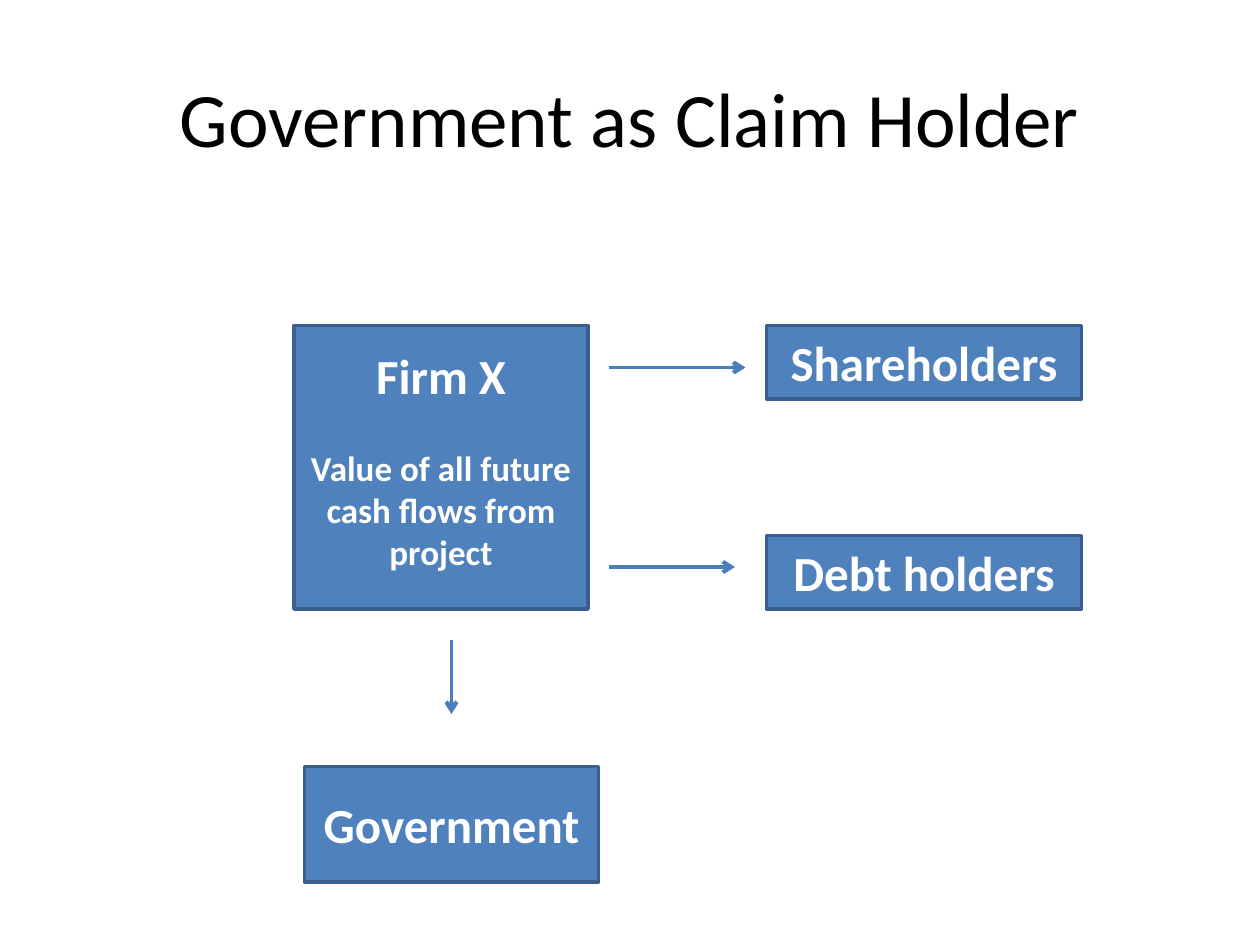
import pptx
import pptx.util
import pptx.dml.color
import pptx.enum.shapes
import pptx.enum.text
import pptx.oxml
import pptx.oxml.ns

Pt = pptx.util.Pt
RGBColor = pptx.dml.color.RGBColor

BLACK = RGBColor(0x00, 0x00, 0x00)
WHITE = RGBColor(0xFF, 0xFF, 0xFF)
BOX_FILL = RGBColor(0x4F, 0x81, 0xBD)
BOX_LINE = RGBColor(0x3A, 0x5F, 0x8C)
ARROW_BLUE = RGBColor(0x4B, 0x7E, 0xBC)
FONT = "Calibri"
HEADING_SIZE = 28
DETAIL_SIZE = 20

FIRM_LEFT, BOX_TOP = 168, 186
FIRM_WIDTH, FIRM_HEIGHT = 168, 162
HOLDER_LEFT, HOLDER_WIDTH, HOLDER_HEIGHT = 438, 180, 42
ARROW_LEFT = 348


def format_paragraph(paragraph, size, color, bold):
    paragraph.alignment = pptx.enum.text.PP_ALIGN.CENTER
    for run in paragraph.runs:
        run.font.name = FONT
        run.font.size = Pt(size)
        run.font.bold = bold
        run.font.color.rgb = color


def set_title(slide, text):
    title = slide.shapes.title
    title.left, title.top, title.width, title.height = Pt(36), Pt(21.6), Pt(648), Pt(90)
    title.text_frame.text = text
    title.text_frame.vertical_anchor = pptx.enum.text.MSO_ANCHOR.MIDDLE
    format_paragraph(title.text_frame.paragraphs[0], 44, BLACK, False)


def add_box(slide, left, top, width, height, heading):
    box = slide.shapes.add_shape(
        pptx.enum.shapes.MSO_SHAPE.RECTANGLE, Pt(left), Pt(top), Pt(width), Pt(height)
    )
    box.shadow.inherit = False
    box.fill.solid()
    box.fill.fore_color.rgb = BOX_FILL
    box.line.color.rgb = BOX_LINE
    box.line.width = Pt(2)
    text_frame = box.text_frame
    text_frame.word_wrap = True
    text_frame.vertical_anchor = pptx.enum.text.MSO_ANCHOR.MIDDLE
    text_frame.text = heading
    format_paragraph(text_frame.paragraphs[0], HEADING_SIZE, WHITE, True)
    return box


def add_detail(box, text):
    box.text_frame.margin_bottom = Pt(13)
    paragraph = box.text_frame.add_paragraph()
    paragraph.text = text
    paragraph.space_before = Pt(24)
    format_paragraph(paragraph, DETAIL_SIZE, WHITE, True)


def add_arrow(slide, start_x, start_y, end_x, end_y):
    arrow = slide.shapes.add_connector(
        pptx.enum.shapes.MSO_CONNECTOR.STRAIGHT,
        Pt(start_x), Pt(start_y), Pt(end_x), Pt(end_y),
    )
    arrow.line.color.rgb = ARROW_BLUE
    arrow.line.width = Pt(2.25)
    properties = arrow.element.spPr
    namespace = pptx.oxml.ns.nsdecls("a")
    line = properties.find(pptx.oxml.ns.qn("a:ln"))
    line.append(pptx.oxml.parse_xml(f'<a:tailEnd {namespace} type="arrow"/>'))
    properties.append(pptx.oxml.parse_xml(f"<a:effectLst {namespace}/>"))


def main():
    presentation = pptx.Presentation()
    presentation.slide_width, presentation.slide_height = Pt(720), Pt(540)
    slide = presentation.slides.add_slide(presentation.slide_layouts[5])
    set_title(slide, "Government as Claim Holder")

    firm = add_box(slide, FIRM_LEFT, BOX_TOP, FIRM_WIDTH, FIRM_HEIGHT, "Firm X")
    add_detail(firm, "Value of all future cash flows from project")

    add_arrow(slide, ARROW_LEFT, 210, 426, 210)
    add_arrow(slide, ARROW_LEFT, 324, 420, 324)
    add_arrow(slide, 258, 366, 258, 408)

    add_box(slide, 174, 438, FIRM_WIDTH, 66, "Government")
    debt_top = BOX_TOP + FIRM_HEIGHT - HOLDER_HEIGHT
    for top, heading in ((BOX_TOP, "Shareholders"), (debt_top, "Debt holders")):
        add_box(slide, HOLDER_LEFT, top, HOLDER_WIDTH, HOLDER_HEIGHT, heading)

    presentation.save("out.pptx")


if __name__ == "__main__":
    main()
